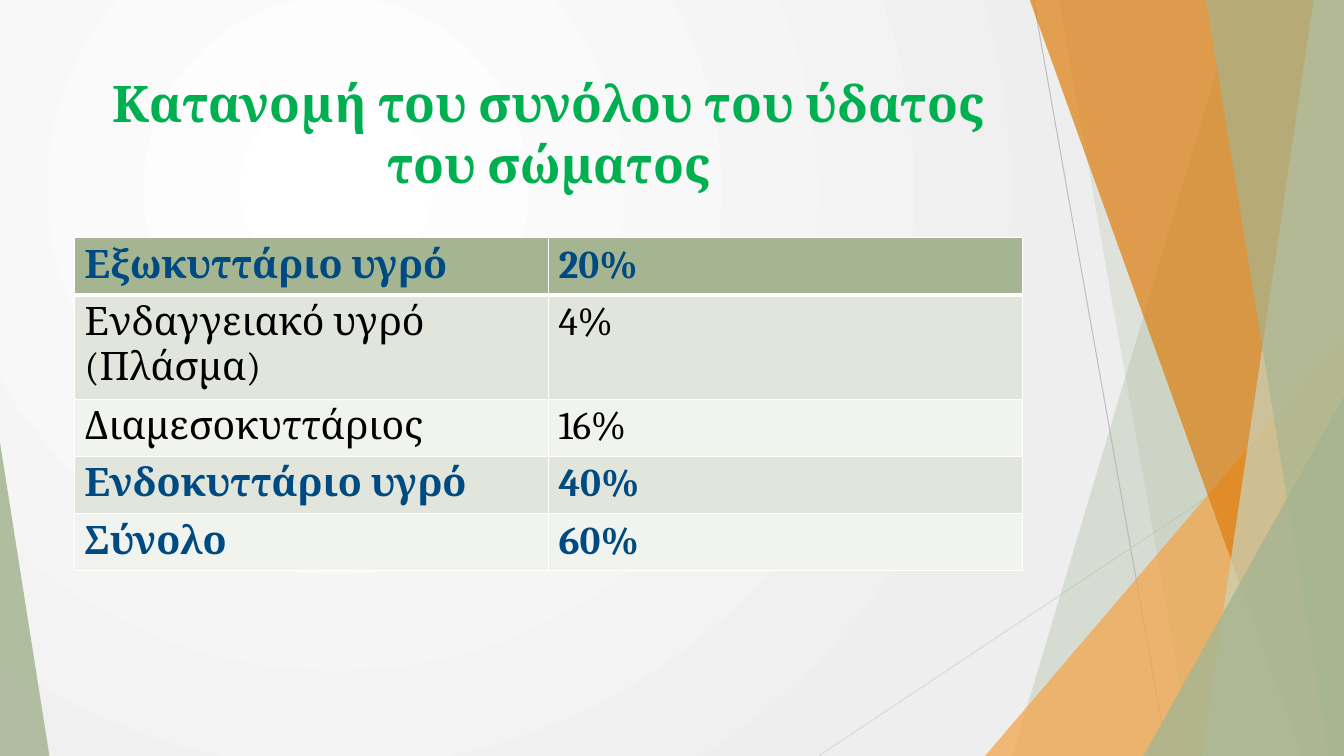
from dataclasses import dataclass

from lxml import etree
from pptx import Presentation
from pptx.dml.color import RGBColor
from pptx.enum.shapes import MSO_CONNECTOR, MSO_SHAPE
from pptx.enum.text import MSO_ANCHOR, PP_ALIGN
from pptx.oxml.ns import qn
from pptx.util import Inches, Pt

STRAIGHT = MSO_CONNECTOR.STRAIGHT
TRIANGLE = MSO_SHAPE.ISOSCELES_TRIANGLE
CENTER = PP_ALIGN.CENTER
TOP = MSO_ANCHOR.TOP

WIDTH, HEIGHT = 13.33, 7.5


@dataclass(frozen=True)
class Theme:
    font: str = "Cambria"
    title_size: int = 36
    table_size: int = 28
    white: str = "FFFFFF"
    backdrop: str = "EEEEEE"
    title: str = "00B050"
    emphasis: str = "004A82"
    body: str = "000000"
    sage: str = "A5B592"
    pale_sage: str = "C9D3BE"
    orange: str = "F3A447"
    dark_orange: str = "DD7E0E"
    bands: tuple = ("F0F3EE", "E1E5DC")
    thin_lines: tuple = ("BFBFBF", "D9D9D9")


THEME = Theme()

FLUID_ROWS = [
    # label, share, emphasised
    ("Εξωκυττάριο υγρό", "20%", True),
    ("Ενδαγγειακό υγρό (Πλάσμα)", "4%", False),
    ("Διαμεσοκυττάριος", "16%", False),
    ("Ενδοκυττάριο υγρό", "40%", True),
    ("Σύνολο", "60%", True),
]


def rgb(color):
    return RGBColor.from_string(color)


def set_background(slide):
    """Radial gradient centred in the upper left quarter."""
    fill = slide.background.fill
    fill.gradient()
    for stop, color in zip(fill.gradient_stops, (THEME.white, THEME.backdrop)):
        stop.color.rgb = rgb(color)
    gradient = slide.element.find(".//" + qn("a:gradFill"))
    gradient.remove(gradient.find(qn("a:lin")))
    circle = etree.SubElement(gradient, qn("a:path"), path="circle")
    etree.SubElement(circle, qn("a:fillToRect"),
                     l="50000", t="50000", r="100000", b="100000")


def add_thin_line(slide, start, end, color):
    line = slide.shapes.add_connector(
        STRAIGHT, *(Inches(value) for value in (*start, *end)))
    line.line.color.rgb = rgb(color)
    line.line.width = Pt(0.75)
    etree.SubElement(line.element.spPr, qn("a:effectLst"))


def paint(shape, color, opacity):
    """Flat translucent fill, opacity in percent."""
    shape.shadow.inherit = False
    shape.fill.solid()
    shape.fill.fore_color.rgb = rgb(color)
    shape.line.fill.background()
    tint = shape.element.spPr.find(".//" + qn("a:srgbClr"))
    etree.SubElement(tint, qn("a:alpha"), val=str(opacity * 1000))


def add_ribbon(slide, top_x, bottom_x, color, opacity):
    """Full-height band from a slanted left edge to the slide's right edge."""
    builder = slide.shapes.build_freeform(Inches(top_x), Inches(-0.01))
    builder.add_line_segments([
        (Inches(WIDTH), Inches(-0.01)),
        (Inches(WIDTH), Inches(HEIGHT)),
        (Inches(bottom_x), Inches(HEIGHT)),
    ])
    paint(builder.convert_to_shape(), color, opacity)


def add_corner(slide, left, top, width, apex, color, opacity):
    """Triangle standing on the bottom edge of the slide."""
    shape = slide.shapes.add_shape(TRIANGLE, Inches(left), Inches(top),
                                   Inches(width), Inches(HEIGHT - top))
    shape.adjustments[0] = apex
    paint(shape, color, opacity)


def add_decoration(slide):
    grey, light_grey = THEME.thin_lines
    add_thin_line(slide, (10.25, 0), (11.58, HEIGHT), grey)
    add_thin_line(slide, (WIDTH, 4.03), (8.12, HEIGHT), light_grey)
    add_ribbon(slide, 12.28, 10.04, THEME.sage, 30)
    add_ribbon(slide, 10.5, 11.83, THEME.sage, 20)
    add_corner(slide, 9.77, 3.33, 3.56, 1, THEME.orange, 72)
    add_ribbon(slide, 10.21, 12.91, THEME.dark_orange, 70)
    add_ribbon(slide, 13.03, 11.92, THEME.pale_sage, 70)
    add_ribbon(slide, 11.96, 13.18, THEME.sage, 65)
    add_corner(slide, 11.34, 3.93, 1.99, 1, THEME.sage, 80)
    add_corner(slide, 0, 4.39, 0.49, 0, THEME.sage, 85)


def write(text_frame, text, size, color, bold):
    paragraph = text_frame.paragraphs[0]
    paragraph.text = text
    font = paragraph.font
    font.name, font.size, font.bold = THEME.font, Pt(size), bold
    font.color.rgb = rgb(color)
    return paragraph


def add_title(slide, text):
    box = slide.shapes.add_textbox(Inches(0.74), Inches(0.67),
                                   Inches(9.4), Inches(1.44))
    box.text_frame.word_wrap = True
    box.text_frame.vertical_anchor = TOP
    paragraph = write(box.text_frame, text, THEME.title_size, THEME.title, True)
    paragraph.alignment = CENTER


def set_borders(cell, top, bottom):
    """White borders; top and bottom widths in points."""
    properties = cell._tc.get_or_add_tcPr()
    widths = {"a:lnL": 1, "a:lnR": 1, "a:lnT": top, "a:lnB": bottom}
    for index, (tag, width) in enumerate(widths.items()):
        border = etree.Element(qn(tag), w=str(Pt(width)))
        fill = etree.SubElement(border, qn("a:solidFill"))
        etree.SubElement(fill, qn("a:srgbClr"), val=THEME.white)
        properties.insert(index, border)


def add_fluid_table(slide):
    table = slide.shapes.add_table(
        len(FLUID_ROWS), 2, Inches(0.74), Inches(2.36),
        Inches(9.4), Inches(0.41 * len(FLUID_ROWS))).table
    for row, (label, share, emphasised) in enumerate(FLUID_ROWS):
        color = THEME.emphasis if emphasised else THEME.body
        for column, text in enumerate((label, share)):
            cell = table.cell(row, column)
            write(cell.text_frame, text, THEME.table_size, color, emphasised)
            cell.fill.solid()
            cell.fill.fore_color.rgb = rgb(
                THEME.bands[row % 2] if row else THEME.sage)
            set_borders(cell, top=3 if row == 1 else 1,
                        bottom=1 if row else 3)


def main():
    presentation = Presentation()
    presentation.slide_width = Inches(WIDTH)
    presentation.slide_height = Inches(HEIGHT)
    slide = presentation.slides.add_slide(presentation.slide_layouts[6])
    set_background(slide)
    add_decoration(slide)
    add_title(slide, "Κατανομή του συνόλου του ύδατος του σώματος")
    add_fluid_table(slide)
    presentation.save("out.pptx")


if __name__ == "__main__":
    main()
